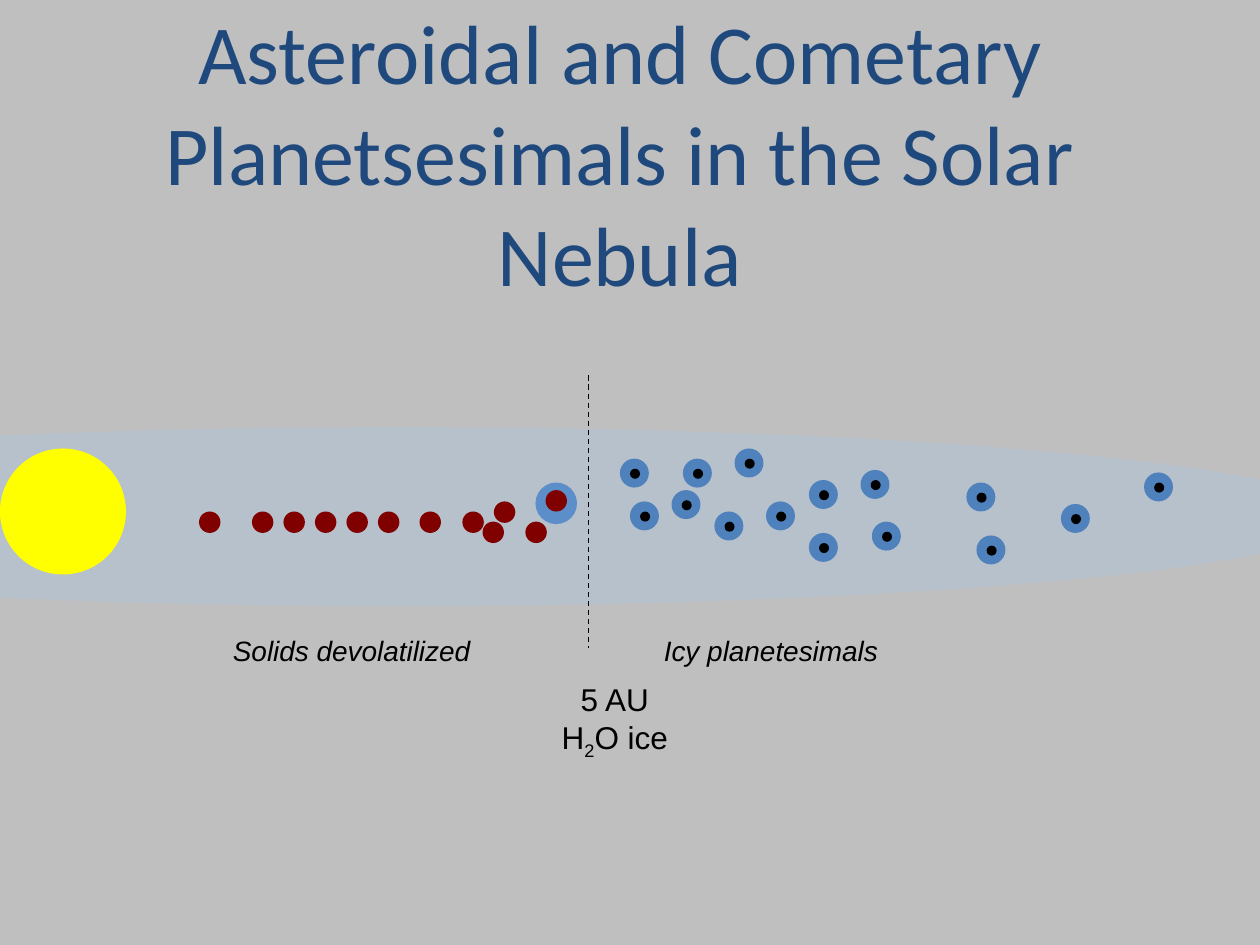
from dataclasses import dataclass

from lxml import etree
from pptx import Presentation
from pptx.dml.color import RGBColor
from pptx.enum.dml import MSO_LINE
from pptx.enum.shapes import MSO_CONNECTOR, MSO_SHAPE
from pptx.enum.text import MSO_ANCHOR, MSO_AUTO_SIZE, PP_ALIGN
from pptx.oxml.ns import qn
from pptx.util import Inches, Pt

OVAL = MSO_SHAPE.OVAL
STRAIGHT = MSO_CONNECTOR.STRAIGHT
DASH = MSO_LINE.DASH
LEFT, CENTER = PP_ALIGN.LEFT, PP_ALIGN.CENTER
TOP, MIDDLE = MSO_ANCHOR.TOP, MSO_ANCHOR.MIDDLE
GROW, FIXED = MSO_AUTO_SIZE.SHAPE_TO_FIT_TEXT, MSO_AUTO_SIZE.NONE

BACKGROUND, ICE, ROCK, BLACK = "BFBFBF", "4F81BD", "800000", "000000"
ROCK_SIZE, ICE_SIZE, CORE_SIZE, CORE_OFFSET = 0.17, 0.23, 0.08, 0.08


@dataclass
class Disc:
    left: float
    top: float
    width: float
    height: float
    color: str
    opacity: int = 100


@dataclass
class Label:
    left: float
    top: float
    width: float
    height: float
    lines: list[list[str]]
    font: dict
    align: PP_ALIGN = LEFT
    anchor: MSO_ANCHOR = TOP
    wrap: bool = False


def rgb(color: str) -> RGBColor:
    return RGBColor.from_string(color)


def draw_disc(shapes, disc: Disc) -> None:
    shape = shapes.add_shape(OVAL, Inches(disc.left), Inches(disc.top),
                             Inches(disc.width), Inches(disc.height))
    shape.shadow.inherit = False
    shape.fill.solid()
    shape.fill.fore_color.rgb = rgb(disc.color)
    shape.line.fill.background()
    if disc.opacity < 100:
        color = shape.fill._xPr.find(f"{qn('a:solidFill')}/{qn('a:srgbClr')}")
        etree.SubElement(color, qn("a:alpha"), val=str(disc.opacity * 1000))


def draw_icy_body(page, left: float, top: float) -> None:
    group = page.shapes.add_group_shape()
    draw_disc(group.shapes, Disc(left, top, ICE_SIZE, ICE_SIZE, ICE))
    draw_disc(group.shapes, Disc(left + CORE_OFFSET, top + CORE_OFFSET,
                                 CORE_SIZE, CORE_SIZE, BLACK))


def draw_label(page, label: Label) -> None:
    box = page.shapes.add_textbox(Inches(label.left), Inches(label.top),
                                  Inches(label.width), Inches(label.height))
    frame = box.text_frame
    frame.word_wrap = label.wrap
    frame.auto_size = FIXED if label.wrap else GROW
    frame.vertical_anchor = label.anchor
    for index, line in enumerate(label.lines):
        para = frame.add_paragraph() if index else frame.paragraphs[0]
        para.alignment = label.align
        for text in line:
            span = para.add_run()
            span.text = text
            for name, value in label.font.items():
                if name == "color":
                    span.font.color.rgb = rgb(value)
                else:
                    setattr(span.font, name, value)
            if text.isdigit():  # a lone digit is a chemical subscript
                span._r.get_or_add_rPr().set("baseline", "-25000")


def draw_snow_line(page) -> None:
    line = page.shapes.add_connector(STRAIGHT, Inches(4.67), Inches(2.98),
                                     Inches(4.67), Inches(5.14))
    line.line.color.rgb = rgb(BLACK)
    line.line.width = Pt(0.75)
    line.line.dash_style = DASH
    etree.SubElement(line._element.spPr, qn("a:effectLst"))


TITLE_FONT = {"name": "Calibri", "size": Pt(48), "color": "1F497D"}
ZONE_FONT = {"name": "Arial", "size": Pt(16), "italic": True, "color": BLACK}
DISTANCE_FONT = {"name": "Arial", "size": Pt(18), "color": BLACK}

# Ice halo, nebula band and sun, from back to front
NEBULA = [
    Disc(4.25, 3.83, 0.33, 0.33, ICE),
    Disc(-4.33, 3.39, 15, 1.42, "99CCFF", 19),
    Disc(0, 3.56, 1, 1, "FFFF00"),
]

# Left and top of each body
ROCKS = [(left, 4.06) for left in (1.58, 2, 2.25, 2.5, 2.75, 3, 3.33, 3.67)]
ROCKS += [(3.83, 4.14), (4.17, 4.14), (3.92, 3.98), (4.33, 3.89)]
ICY_BODIES = [
    (4.92, 3.64), (5, 3.98), (5.42, 3.64), (5.83, 3.56), (5.33, 3.89),
    (5.67, 4.06), (6.08, 3.98), (6.42, 3.81), (6.42, 4.23), (6.83, 3.73),
    (6.92, 4.14), (7.67, 3.83), (8.42, 4), (7.75, 4.25), (9.08, 3.75),
]

LABELS = [
    Label(4.35, 5.35, 1.06, 0.7, [["5 AU"], ["H", "2", "O ice"]],
          DISTANCE_FONT, CENTER),
    Label(1.75, 4.98, 2.09, 0.37, [["Solids devolatilized"]], ZONE_FONT),
    Label(5.17, 4.98, 1.91, 0.37, [["Icy planetesimals"]], ZONE_FONT),
    Label(0.42, 0.58, 9, 1.25,
          [["Asteroidal and Cometary Planetsesimals in the Solar Nebula"]],
          TITLE_FONT, CENTER, MIDDLE, True),
]


def main() -> None:
    deck = Presentation()
    deck.slide_width, deck.slide_height = Inches(10), Inches(7.5)
    page = deck.slides.add_slide(deck.slide_layouts[6])
    page.background.fill.solid()
    page.background.fill.fore_color.rgb = rgb(BACKGROUND)

    # Nebula and its planetesimals
    for disc in NEBULA:
        draw_disc(page.shapes, disc)
    for left, top in ROCKS:
        draw_disc(page.shapes, Disc(left, top, ROCK_SIZE, ROCK_SIZE, ROCK))
    for left, top in ICY_BODIES:
        draw_icy_body(page, left, top)

    # Snow line and wording
    draw_snow_line(page)
    for label in LABELS:
        draw_label(page, label)

    deck.save("out.pptx")


if __name__ == "__main__":
    main()
